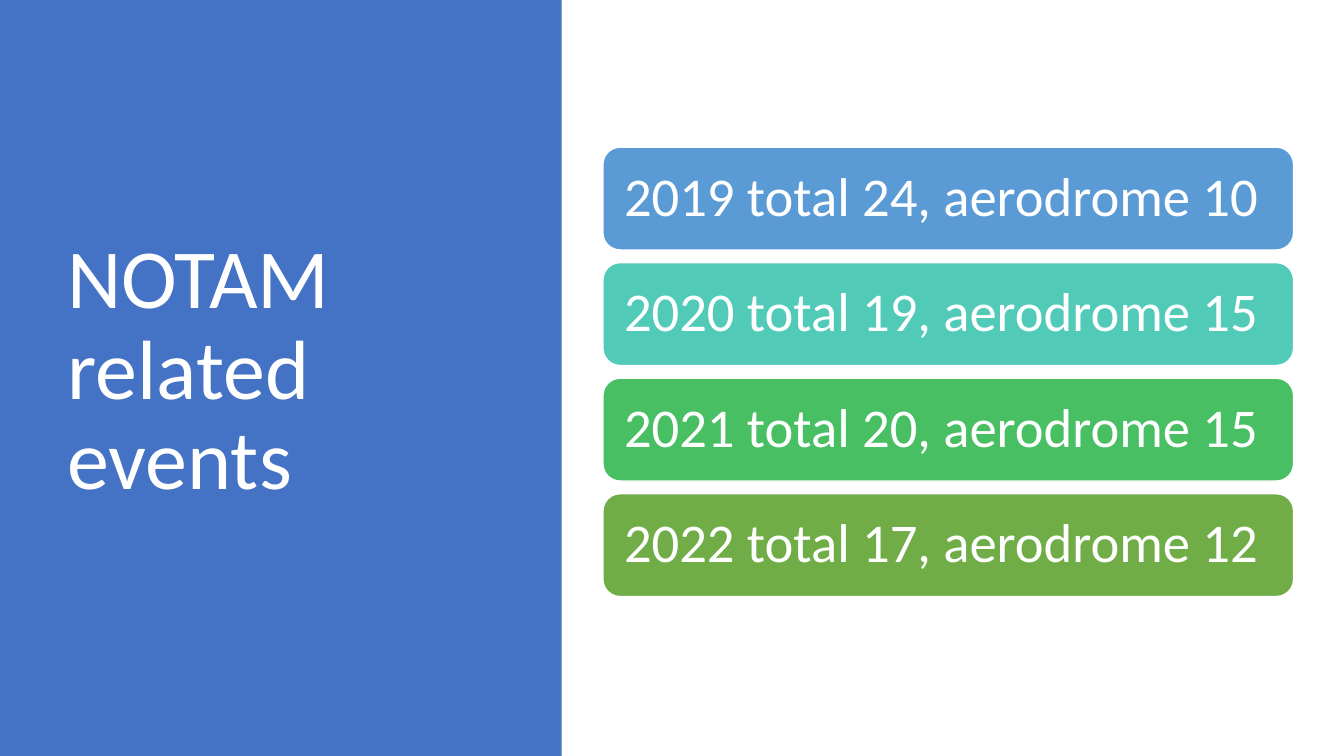
from dataclasses import dataclass

from pptx import Presentation
from pptx.dml.color import RGBColor
from pptx.enum.shapes import MSO_SHAPE
from pptx.enum.text import MSO_ANCHOR, PP_ALIGN
from pptx.shapes.autoshape import Shape
from pptx.slide import Slide
from pptx.util import Inches, Pt

WHITE = "FFFFFF"
PANEL_BLUE = "4472C4"
FONT = "Calibri"

BAR_LEFT, BAR_TOP = 5.98, 1.46
BAR_WIDTH, BAR_HEIGHT = 6.85, 1.02
BAR_PITCH = 1.146


@dataclass(frozen=True)
class YearCount:
    year: int
    total: int
    aerodrome: int
    fill: str


YEAR_COUNTS = [
    YearCount(2019, 24, 10, "5B9BD5"),
    YearCount(2020, 19, 15, "52CAB8"),
    YearCount(2021, 20, 15, "49BF64"),
    YearCount(2022, 17, 12, "70AD47"),
]


def color(value: str) -> RGBColor:
    return RGBColor.from_string(value)


def write(shape: Shape, text: str, size: float, inset_x: float, inset_y: float) -> None:
    """Set white, left-aligned, vertically centred text."""
    frame = shape.text_frame
    frame.text = text
    frame.word_wrap = True
    frame.vertical_anchor = MSO_ANCHOR.MIDDLE
    frame.margin_left = frame.margin_right = Inches(inset_x)
    frame.margin_top = frame.margin_bottom = Inches(inset_y)
    paragraph = frame.paragraphs[0]
    paragraph.alignment = PP_ALIGN.LEFT
    paragraph.line_spacing = 0.9
    font = paragraph.runs[0].font
    font.name = FONT
    font.size = Pt(size)
    font.color.rgb = color(WHITE)


def add_panel(slide: Slide) -> None:
    panel = slide.shapes.add_shape(
        MSO_SHAPE.RECTANGLE, 0, 0, Inches(5.57), Inches(7.5)
    )
    panel.shadow.inherit = False
    panel.fill.solid()
    panel.fill.fore_color.rgb = color(PANEL_BLUE)
    panel.line.fill.background()


def add_title(slide: Slide) -> None:
    title = slide.shapes.add_textbox(
        Inches(0.57), Inches(0.68), Inches(4.16), Inches(6.02)
    )
    write(title, "NOTAM related events", 60, 0.1, 0.05)


def add_year_bar(slide: Slide, index: int, count: YearCount) -> None:
    bar = slide.shapes.add_shape(
        MSO_SHAPE.ROUNDED_RECTANGLE,
        Inches(BAR_LEFT),
        Inches(BAR_TOP + index * BAR_PITCH),
        Inches(BAR_WIDTH),
        Inches(BAR_HEIGHT),
    )
    bar.shadow.inherit = False
    bar.fill.solid()
    bar.fill.fore_color.rgb = color(count.fill)
    bar.line.color.rgb = color(WHITE)
    bar.line.width = Pt(1)
    label = f"{count.year} total {count.total}, aerodrome {count.aerodrome}"
    write(bar, label, 39, 0.16, 0.16)


def main() -> None:
    presentation = Presentation()
    presentation.slide_width = Inches(13.33)
    presentation.slide_height = Inches(7.5)
    slide = presentation.slides.add_slide(presentation.slide_layouts[6])
    add_panel(slide)
    add_title(slide)
    for index, count in enumerate(YEAR_COUNTS):
        add_year_bar(slide, index, count)
    presentation.save("out.pptx")


if __name__ == "__main__":
    main()
